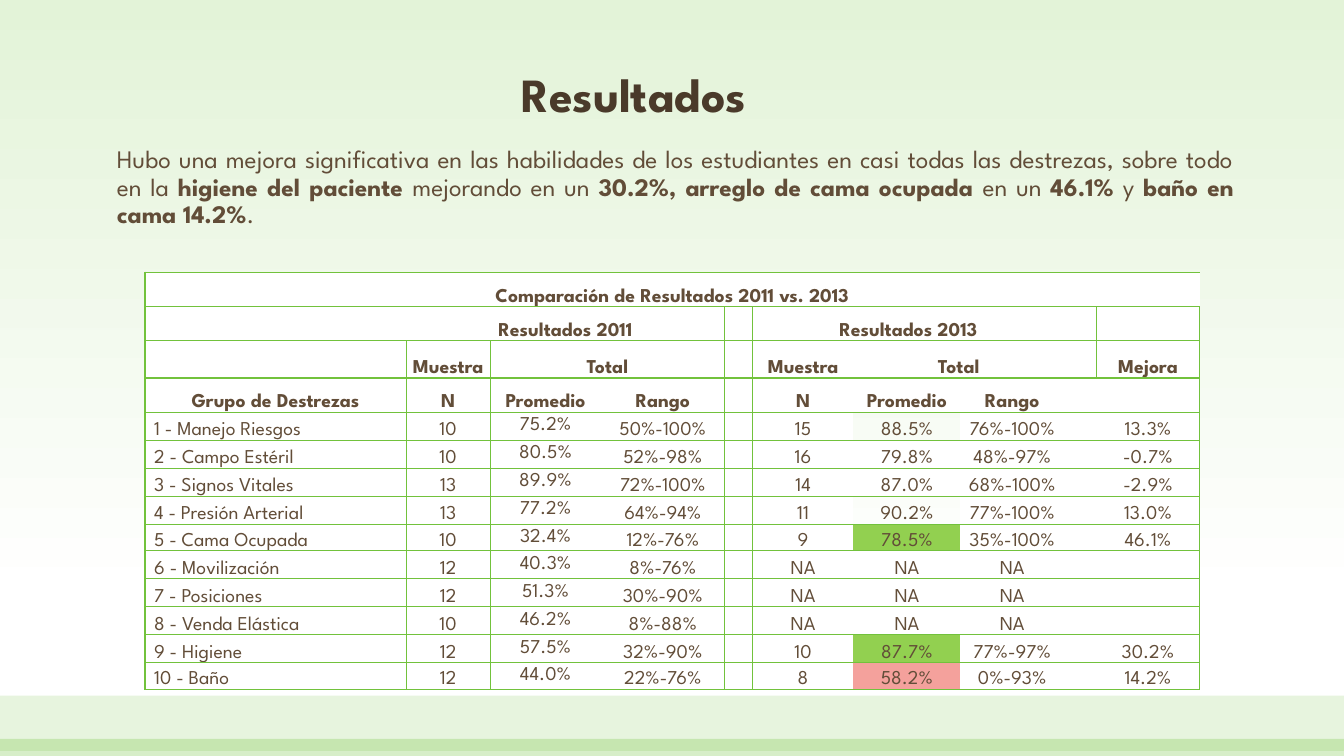
import lxml.etree
import pptx
import pptx.dml.color
import pptx.enum.shapes
import pptx.enum.text
import pptx.oxml.ns
import pptx.util

Pt = pptx.util.Pt
RGB = pptx.dml.color.RGBColor.from_string
qn = pptx.oxml.ns.qn
ALIGN = pptx.enum.text.PP_ALIGN
ANCHOR = pptx.enum.text.MSO_ANCHOR

THEME = {
    "font": "League Spartan",
    "title": "4A3A2A", "text": "624D38", "green": "72C23C", "paper": "FFFFFF",
    "sky": "E3F3D8", "gain": "92D050", "low": "F4A19C",
    "title_size": 34, "body_size": 18, "table_size": 14,
}


def add_run(paragraph, text, size, color, bold=False):
    run = paragraph.add_run()
    run.text = text
    run.font.name = THEME["font"]
    run.font.size = Pt(size)
    run.font.bold = bold
    run.font.color.rgb = RGB(color)


def add_border(cell, position, side, visible):
    line = lxml.etree.Element(qn(f"a:ln{side}"), w=str(Pt(1)))
    if visible:
        solid = lxml.etree.SubElement(line, qn("a:solidFill"))
        lxml.etree.SubElement(solid, qn("a:srgbClr"), val=THEME["green"])
    else:
        lxml.etree.SubElement(line, qn("a:noFill"))
    cell._tc.get_or_add_tcPr().insert(position, line)


deck = pptx.Presentation()
deck.slide_width, deck.slide_height = Pt(960), Pt(540)
slide = deck.slides.add_slide(deck.slide_layouts[1])

# Background fading downwards to white
backdrop = slide.background.fill
backdrop.gradient()
backdrop.gradient_angle = 270
fade = ((0, THEME["sky"]), (0.79, THEME["paper"]))
for stop, (position, color) in zip(backdrop.gradient_stops, fade):
    stop.position = position
    stop.color.rgb = RGB(color)

# Translucent bands along the bottom
for top, height, opacity in ((496.8, 39.6, 17), (527.8, 12.2, 28)):
    band = slide.shapes.add_shape(
        pptx.enum.shapes.MSO_SHAPE.RECTANGLE, 0, Pt(top), Pt(960), Pt(height))
    band.shadow.inherit = False
    band.line.fill.background()
    band.fill.solid()
    band.fill.fore_color.rgb = RGB(THEME["green"])
    tint = band.element.spPr.find(qn("a:solidFill")).find(qn("a:srgbClr"))
    lxml.etree.SubElement(tint, qn("a:alpha"), val=str(opacity * 1000))

# Title
heading = slide.shapes.title
heading.left, heading.top, heading.width, heading.height = Pt(365), Pt(34.6), Pt(229.7), Pt(56.9)
heading.text_frame.auto_size = pptx.enum.text.MSO_AUTO_SIZE.NONE
heading.text_frame.vertical_anchor = ANCHOR.BOTTOM
heading_line = heading.text_frame.paragraphs[0]
heading_line.alignment = ALIGN.LEFT
heading_line.line_spacing = 0.9
add_run(heading_line, "Resultados", THEME["title_size"], THEME["title"], True)

# Summary of the findings
summary = slide.placeholders[1]
summary.left, summary.top, summary.width, summary.height = Pt(72.7), Pt(101.5), Pt(815.8), Pt(81.4)
summary.text_frame.auto_size = pptx.enum.text.MSO_AUTO_SIZE.NONE
findings = summary.text_frame.paragraphs[0]
findings.alignment = ALIGN.JUSTIFY
findings.line_spacing = 0.9
findings.space_before = Pt(18)
findings_format = findings._p.get_or_add_pPr()
findings_format.set("marL", str(Pt(3.6)))
findings_format.set("indent", "0")
lxml.etree.SubElement(findings_format, qn("a:buNone"))
for text, bold in (
    ("Hubo una mejora significativa en las habilidades de los estudiantes "
     "en casi todas las destrezas, sobre todo en la ", False),
    ("higiene del paciente ", True),
    ("mejorando en un ", False),
    ("30.2%, arreglo de cama ocupada ", True),
    ("en un ", False),
    ("46.1% ", True),
    ("y ", False),
    ("baño en cama 14.2%", True),
    (".", False),
):
    add_run(findings, text, THEME["body_size"], THEME["text"], bold)

# Comparison data: four heading rows, then one row per skill group
headings = [
    ["Comparación de Resultados 2011 vs. 2013"] + [""] * 9,
    ["", "Resultados 2011", "", "", "", "Resultados 2013", "", "", "", ""],
    ["", "Muestra", "Total", "", "", "Muestra", "Total", "", "", "Mejora"],
    ["Grupo de Destrezas", "N", "Promedio", "Rango", "", "N", "Promedio", "Rango", "", ""],
]
skills = [
    ("1 - Manejo Riesgos", "10", "75.2%", "50%-100%", "15", "88.5%", "76%-100%", "13.3%"),
    ("2 - Campo Estéril", "10", "80.5%", "52%-98%", "16", "79.8%", "48%-97%", "-0.7%"),
    ("3 - Signos Vitales", "13", "89.9%", "72%-100%", "14", "87.0%", "68%-100%", "-2.9%"),
    ("4 - Presión Arterial", "13", "77.2%", "64%-94%", "11", "90.2%", "77%-100%", "13.0%"),
    ("5 - Cama Ocupada", "10", "32.4%", "12%-76%", "9", "78.5%", "35%-100%", "46.1%"),
    ("6 - Movilización", "12", "40.3%", "8%-76%", "NA", "NA", "NA", ""),
    ("7 - Posiciones", "12", "51.3%", "30%-90%", "NA", "NA", "NA", ""),
    ("8 - Venda Elástica", "10", "46.2%", "8%-88%", "NA", "NA", "NA", ""),
    ("9 - Higiene", "12", "57.5%", "32%-90%", "10", "87.7%", "77%-97%", "30.2%"),
    ("10 - Baño", "12", "44.0%", "22%-76%", "8", "58.2%", "0%-93%", "14.2%"),
]
rows = headings + [[*s[:4], "", *s[4:7], "", s[7]] for s in skills]
column_widths = [186.5, 60, 79.2, 88.4, 20, 72, 76.4, 74, 23, 74]
row_heights = [24.5, 24.5, 26.5, 24.5, 20, 20, 20, 20, 19, 20, 20, 20, 20, 19]
merges = [(0, 0, 9), (1, 1, 3), (1, 5, 7), (2, 2, 3), (2, 6, 7)]

# Rows crossed by the vertical rule at each column edge
last = len(rows)
vertical_rules = {0: range(last), 1: range(2, last), 2: range(2, last), 4: range(1, last),
                  5: range(1, last), 9: range(1, 3), 10: range(last)}
highlights = {(4, 6): None, (7, 6): None, (8, 6): THEME["gain"],
              (12, 6): THEME["gain"], (13, 6): THEME["low"]}

# Comparison table
comparison = slide.shapes.add_table(
    last, len(column_widths), Pt(103.6), Pt(194.5),
    Pt(sum(column_widths)), Pt(sum(row_heights))).table
comparison.first_row = False
comparison.horz_banding = False
for column, width in zip(comparison.columns, column_widths):
    column.width = Pt(width)
for row, height in zip(comparison.rows, row_heights):
    row.height = Pt(height)

for r, values in enumerate(rows):
    for c, value in enumerate(values):
        cell = comparison.cell(r, c)
        is_skill = r >= len(headings)
        is_name = is_skill and c == 0
        cell.margin_left = Pt(6.5 if is_name else 0)
        cell.margin_right = cell.margin_top = cell.margin_bottom = 0
        cell.vertical_anchor = ANCHOR.MIDDLE if is_skill and c == 2 else ANCHOR.BOTTOM
        entry = cell.text_frame.paragraphs[0]
        entry.alignment = ALIGN.LEFT if is_name else ALIGN.CENTER
        if value:
            add_run(entry, value, THEME["table_size"], THEME["text"], not is_skill)
        else:
            lxml.etree.SubElement(entry._p, qn("a:endParaRPr"), sz=str(THEME["table_size"] * 100))

        shade = highlights.get((r, c), THEME["paper"])
        if shade:
            cell.fill.solid()
            cell.fill.fore_color.rgb = RGB(shade)
        else:
            cell.fill.background()
        sides = (("L", r in vertical_rules.get(c, ())),
                 ("R", r in vertical_rules.get(c + 1, ())),
                 ("T", True), ("B", True))
        for position, (side, visible) in enumerate(sides):
            add_border(cell, position, side, visible)

for r, first, final in merges:
    comparison.cell(r, first).merge(comparison.cell(r, final))

deck.save("out.pptx")
